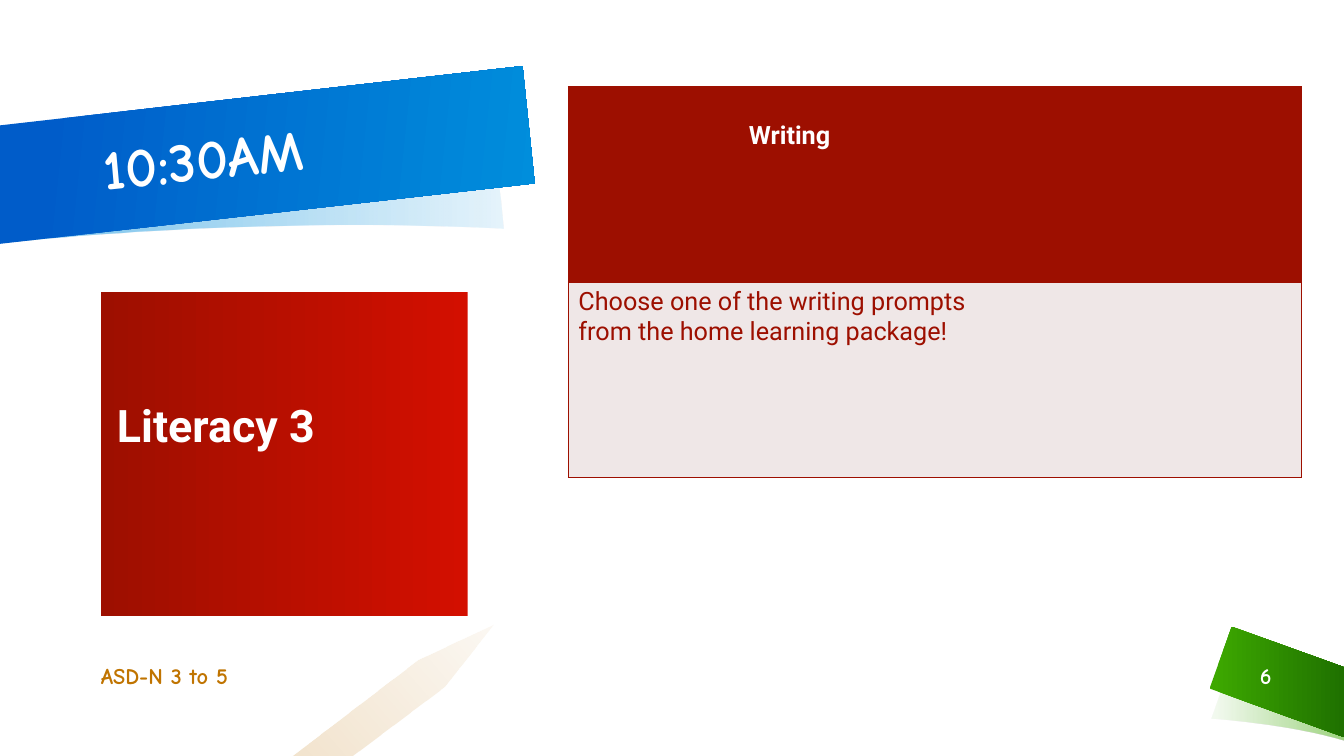
from dataclasses import dataclass

from pptx import Presentation
from pptx.dml.color import RGBColor
from pptx.enum import shapes, text
from pptx.oxml import parse_xml
from pptx.oxml.ns import nsdecls, qn
from pptx.util import Pt


@dataclass(frozen=True)
class Theme:
    white: str = "FFFFFF"
    red: str = "9D0F00"
    bright_red: str = "D30F00"
    pale: str = "EFE7E7"
    blue: str = "005CC9"
    sky: str = "008EDC"
    green: str = "3DA800"
    dark_green: str = "1F7100"
    amber: str = "C07400"
    display: str = "Comic Neue"
    body: str = "Roboto"
    title_size: int = 40
    subject_size: int = 32
    table_size: int = 18
    footer_size: int = 16


THEME = Theme()


def curve(start, control_1, control_2, end, steps=24):
    """Points along a cubic curve, both ends included."""
    points = []
    for step in range(steps + 1):
        t = step / steps
        weights = ((1 - t) ** 3, 3 * t * (1 - t) ** 2, 3 * t * t * (1 - t), t ** 3)
        points.append(tuple(
            sum(w * p[axis] for w, p in zip(weights, (start, control_1, control_2, end)))
            for axis in (0, 1)))
    return points


def fill_gradient(shape, stops, angle):
    """Stops are (position %, colour, opacity %); the angle runs clockwise."""
    stop_xml = "".join(
        f'<a:gs pos="{position * 1000}"><a:srgbClr val="{colour}">'
        f'<a:alpha val="{opacity * 1000}"/></a:srgbClr></a:gs>'
        for position, colour, opacity in stops)
    shape.fill.gradient()
    properties = shape._element.spPr
    properties.replace(properties.find(qn("a:gradFill")), parse_xml(
        f'<a:gradFill rotWithShape="1" {nsdecls("a")}><a:gsLst>{stop_xml}</a:gsLst>'
        f'<a:lin ang="{angle * 60000}" scaled="0"/></a:gradFill>'))
    shape.line.fill.background()
    shape.shadow.inherit = False


def add_outline(slide, points, stops, angle):
    corners = [(Pt(x), Pt(y)) for x, y in points]
    builder = slide.shapes.build_freeform(*corners[0], scale=1.0)
    builder.add_line_segments(corners[1:], close=True)
    fill_gradient(builder.convert_to_shape(), stops, angle)


def write(frame, words, size, colour, font=THEME.display, bold=True,
          align=text.PP_ALIGN.LEFT, spacing=1.0):
    frame.word_wrap = True
    paragraph = frame.paragraphs[0]
    paragraph.text = words
    paragraph.alignment = align
    paragraph.line_spacing = spacing
    paragraph.font.name = font
    paragraph.font.size = Pt(size)
    paragraph.font.bold = bold
    paragraph.font.color.rgb = RGBColor.from_string(colour)


def place_title(slide, words):
    title = slide.shapes.title
    slide.shapes._spTree.append(title._element)  # in front of the band
    title.left, title.top, title.width, title.height = Pt(66), Pt(66), Pt(312), Pt(83.5)
    title.rotation = -6
    title.text_frame.vertical_anchor = text.MSO_ANCHOR.MIDDLE
    write(title.text_frame, words, THEME.title_size, THEME.white, spacing=0.9)


def add_subject(slide, words):
    panel = slide.shapes.add_shape(
        shapes.MSO_SHAPE.RECTANGLE, Pt(72), Pt(208.8), Pt(262), Pt(231))
    fill_gradient(panel, [(0, THEME.bright_red, 100), (100, THEME.red, 100)], 180)
    frame = panel.text_frame
    frame.vertical_anchor = text.MSO_ANCHOR.MIDDLE
    frame.margin_left, frame.margin_top = Pt(11.5), Pt(14.4)
    frame.margin_right, frame.margin_bottom = Pt(8.6), Pt(51)
    write(frame, words, THEME.subject_size, THEME.white, THEME.body, spacing=0.9)


def add_footer(slide, left, width, words, colour, inset, align):
    frame = slide.shapes.add_textbox(Pt(left), Pt(468), Pt(width), Pt(28.8)).text_frame
    frame.vertical_anchor = text.MSO_ANCHOR.MIDDLE
    frame.margin_left = Pt(inset)
    write(frame, words, THEME.footer_size, colour, align=align)


def set_borders(cell, drawn):
    """Draw the named sides of a cell and hide the others."""
    properties = cell._tc.get_or_add_tcPr()
    for index, side in enumerate("LRTB"):
        paint = (f'<a:solidFill><a:srgbClr val="{THEME.red}"/></a:solidFill>'
                 if side in drawn else "<a:noFill/>")
        properties.insert(index, parse_xml(
            f'<a:ln{side} w="12700" {nsdecls("a")}>{paint}</a:ln{side}>'))


def add_activity_table(slide, heading, task):
    table = slide.shapes.add_table(2, 2, Pt(406), Pt(62), Pt(523.4), Pt(279)).table
    for column, width in zip(table.columns, (316, 207.4)):
        column.width = Pt(width)
    for row, fill in enumerate((THEME.red, THEME.pale)):
        table.rows[row].height = Pt(139.5)
        for column, outer_side in enumerate("LR"):
            cell = table.cell(row, column)
            cell.fill.solid()
            cell.fill.fore_color.rgb = RGBColor.from_string(fill)
            set_borders(cell, "TB" + outer_side)
    heading_cell = table.cell(0, 0)
    heading_cell.margin_top = Pt(24.7)
    write(heading_cell.text_frame, heading, THEME.table_size, THEME.white, THEME.body,
          align=text.PP_ALIGN.CENTER)
    write(table.cell(1, 0).text_frame, task, THEME.table_size, THEME.red, THEME.body,
          bold=False)


def add_decoration(slide):
    # Page-number ribbon with its shade
    add_outline(slide,
                curve((865.4, 513.4), (865.4, 513.4), (920.2, 517), (960, 529))
                + curve((960, 481), (916, 469), (881, 469.4), (881, 469.4)),
                [(3, THEME.green, 6), (100, THEME.green, 50)], 0)
    add_outline(slide, [(960, 476.6), (879.8, 447.6), (864, 491.8), (960, 526.5)],
                [(3, THEME.green, 100), (100, THEME.dark_green, 100)], 0)
    # Title ribbon with its shade
    add_outline(slide,
                curve((350.6, 81.4), (350.6, 81.4), (225.4, 67.7), (0, 90))
                + curve((0, 173.5), (206, 152.6), (359.3, 163.4), (359.3, 163.4)),
                [(0, THEME.sky, 10), (88, THEME.sky, 50)], 180)
    add_outline(slide, [(0, 174.2), (382, 131), (373.3, 47.2), (0, 89.6)],
                [(9, THEME.blue, 100), (100, THEME.sky, 100)], 6)
    # Pencil
    add_outline(slide, [(352.8, 446.4), (298.8, 471.6), (208.8, 540), (252, 540), (317.5, 491)],
                [(0, THEME.amber, 5), (100, THEME.amber, 20)], 139)


def main():
    deck = Presentation()
    deck.slide_width, deck.slide_height = Pt(960), Pt(540)
    slide = deck.slides.add_slide(deck.slide_layouts[5])

    add_decoration(slide)
    place_title(slide, "10:30AM")
    add_subject(slide, "Literacy 3")
    add_footer(slide, 72, 208, "ASD-N 3 to 5", THEME.amber, 0, text.PP_ALIGN.LEFT)
    add_footer(slide, 879, 50.4, "6", THEME.white, 7.2, text.PP_ALIGN.CENTER)
    add_activity_table(slide, "Writing",
                       "Choose one of the writing prompts from the home learning package!")
    deck.save("out.pptx")


if __name__ == "__main__":
    main()
